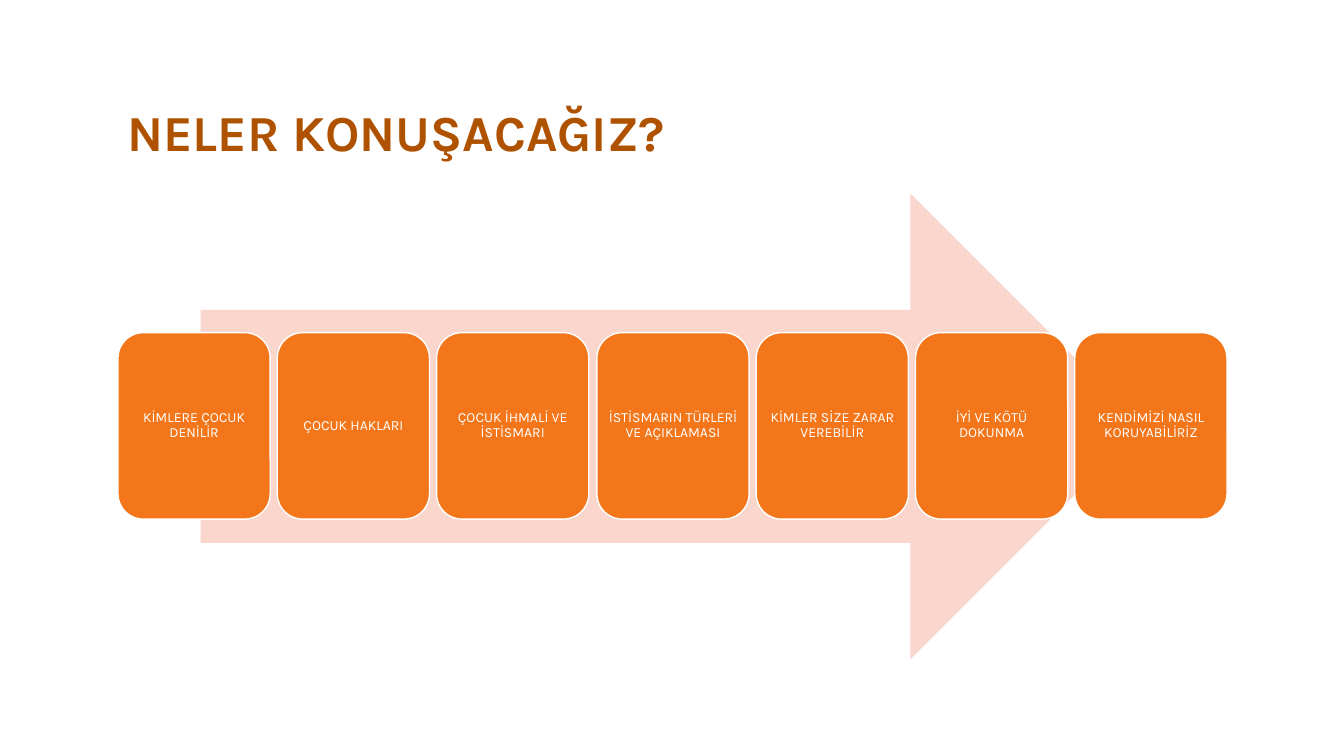
from dataclasses import dataclass

from pptx import Presentation
from pptx.dml.color import RGBColor
from pptx.enum.shapes import MSO_SHAPE
from pptx.enum.text import MSO_ANCHOR, MSO_AUTO_SIZE, PP_ALIGN
from pptx.util import Emu, Pt

RIGHT_ARROW = MSO_SHAPE.RIGHT_ARROW
ROUNDED = MSO_SHAPE.ROUNDED_RECTANGLE
MIDDLE, BOTTOM = MSO_ANCHOR.MIDDLE, MSO_ANCHOR.BOTTOM
LEFT, CENTER = PP_ALIGN.LEFT, PP_ALIGN.CENTER
NO_AUTOFIT = MSO_AUTO_SIZE.NONE

EMU_PER_PX = 9144  # 100 px to the inch
FONT = "Karla"
WHITE, ORANGE, PINK, BROWN = "FFFFFF", "F3771A", "FAD6CD", "AF5200"

TOPICS = (
    "KİMLERE ÇOCUK DENİLİR",
    "ÇOCUK HAKLARI",
    "ÇOCUK İHMALİ VE İSTİSMARI",
    "İSTİSMARIN TÜRLERİ VE AÇIKLAMASI",
    "KİMLER SİZE ZARAR VEREBİLİR",
    "İYİ VE KÖTÜ DOKUNMA",
    "KENDİMİZİ NASIL KORUYABİLİRİZ",
)
FIRST_LEFT, LAST_LEFT = 117, 1066


@dataclass(frozen=True)
class Area:
    left: int
    top: int
    width: int
    height: int

    def emu(self) -> tuple[Emu, ...]:
        return tuple(px(n) for n in (self.left, self.top, self.width, self.height))


@dataclass(frozen=True)
class Card:
    area: Area
    label: str


def px(length: int) -> Emu:
    return Emu(length * EMU_PER_PX)


def color(value: str) -> RGBColor:
    return RGBColor.from_string(value)


def write(box, text: str, *, size: int, fill: str, bold: bool = False,
          align=LEFT, anchor=MIDDLE, inset: tuple[int, int] = (10, 5)) -> None:
    frame = box.text_frame
    frame.word_wrap = True
    frame.auto_size = NO_AUTOFIT
    frame.vertical_anchor = anchor
    frame.margin_left = frame.margin_right = px(inset[0])
    frame.margin_top = frame.margin_bottom = px(inset[1])
    para = frame.paragraphs[0]
    para.alignment = align
    para.line_spacing = 0.9
    span = para.add_run()
    span.text = text
    span.font.name = FONT
    span.font.size = Pt(size)
    span.font.bold = bold
    span.font.color.rgb = color(fill)


def draw_shape(page, kind, area: Area, fill: str, line: str | None = None):
    shape = page.shapes.add_shape(kind, *area.emu())
    shape.shadow.inherit = False
    shape.fill.solid()
    shape.fill.fore_color.rgb = color(fill)
    if line:
        shape.line.color.rgb = color(line)
        shape.line.width = Pt(1)
    else:
        shape.line.fill.background()
    return shape


def draw_card(page, card: Card) -> None:
    box = draw_shape(page, ROUNDED, card.area, ORANGE, WHITE)
    write(box, card.label, size=10, fill=WHITE, align=CENTER, inset=(4, 4))


def main() -> None:
    deck = Presentation()
    deck.slide_width, deck.slide_height = px(1333), px(750)
    page = deck.slides.add_slide(deck.slide_layouts[5])

    # Title
    title = page.shapes.title
    title.left, title.top, title.width, title.height = Area(116, 33, 1100, 133).emu()
    write(title, "NELER KONUŞACAĞIZ?", size=36, fill=BROWN, bold=True, anchor=BOTTOM)

    # Arrow behind the cards
    draw_shape(page, RIGHT_ARROW, Area(199, 192, 935, 462), PINK)

    # Evenly spaced topic cards
    pitch = (LAST_LEFT - FIRST_LEFT) / (len(TOPICS) - 1)
    for index, topic in enumerate(TOPICS):
        left = round(FIRST_LEFT + index * pitch)
        draw_card(page, Card(Area(left, 330, 151, 185), topic))

    deck.save("out.pptx")


if __name__ == "__main__":
    main()
